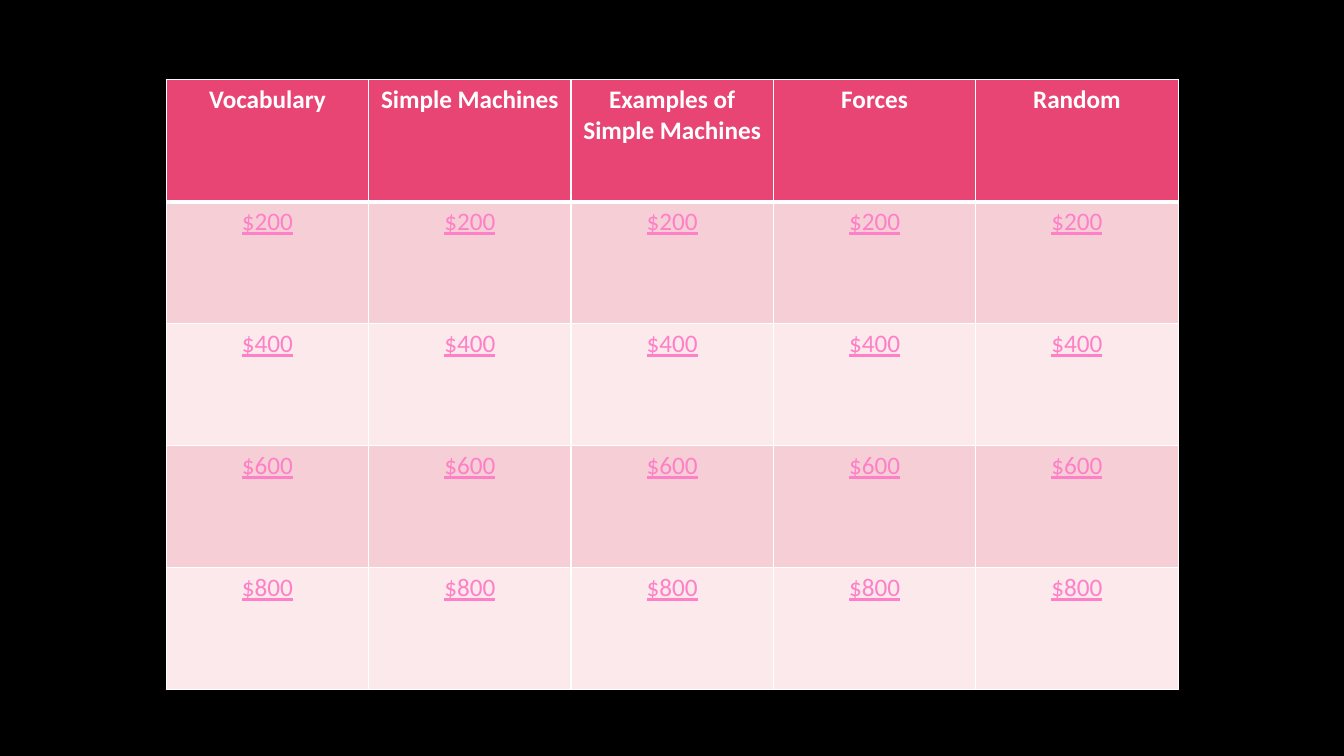
from lxml import etree
from pptx import Presentation
from pptx.dml.color import RGBColor
from pptx.enum.text import PP_ALIGN
from pptx.oxml.ns import qn
from pptx.util import Cm, Pt

CENTER = PP_ALIGN.CENTER
COLORS = {
    "background": "000000",
    "header": "E84574",
    "odd_row": "F6CFD6",
    "even_row": "FBE9EB",
    "header_text": "FFFFFF",
    "amount_text": "FE80C7",
    "border": "FFFFFF",
}
CATEGORIES = [
    "Vocabulary",
    "Simple Machines",
    "Examples of Simple Machines",
    "Forces",
    "Random",
]
AMOUNTS = ["$200", "$400", "$600", "$800"]


def color(name):
    return RGBColor.from_string(COLORS[name])


def set_borders(cell, top, bottom):
    properties = cell._tc.get_or_add_tcPr()
    for side, width in (("lnL", 1), ("lnR", 1), ("lnT", top), ("lnB", bottom)):
        line = etree.SubElement(properties, qn(f"a:{side}"), w=str(Pt(width)))
        fill = etree.SubElement(line, qn("a:solidFill"))
        etree.SubElement(fill, qn("a:srgbClr"), val=COLORS["border"])


def style_cell(cell, text, row):
    is_header = row == 0
    set_borders(cell, top=3 if row == 1 else 1, bottom=3 if is_header else 1)
    fill_name = "header" if is_header else "odd_row" if row % 2 else "even_row"
    cell.fill.solid()
    cell.fill.fore_color.rgb = color(fill_name)
    cell.text = text
    para = cell.text_frame.paragraphs[0]
    para.alignment = CENTER
    font = para.font
    font.name = "Calibri"
    font.size = Pt(18)
    font.bold = is_header
    font.underline = not is_header
    font.color.rgb = color("header_text" if is_header else "amount_text")


def add_game_board(page, left, top, width, height):
    rows = [CATEGORIES] + [[amount] * len(CATEGORIES) for amount in AMOUNTS]
    board = page.shapes.add_table(
        len(rows), len(CATEGORIES), left, top, width, height
    ).table
    for row, texts in enumerate(rows):
        for column, text in enumerate(texts):
            style_cell(board.cell(row, column), text, row)


def main():
    deck = Presentation()
    deck.slide_width = Cm(33.87)
    deck.slide_height = Cm(19.05)
    page = deck.slides.add_slide(deck.slide_layouts[6])
    page.background.fill.solid()
    page.background.fill.fore_color.rgb = color("background")
    add_game_board(page, Cm(4.19), Cm(2.01), Cm(25.5), Cm(15.37))
    deck.save("out.pptx")


if __name__ == "__main__":
    main()
